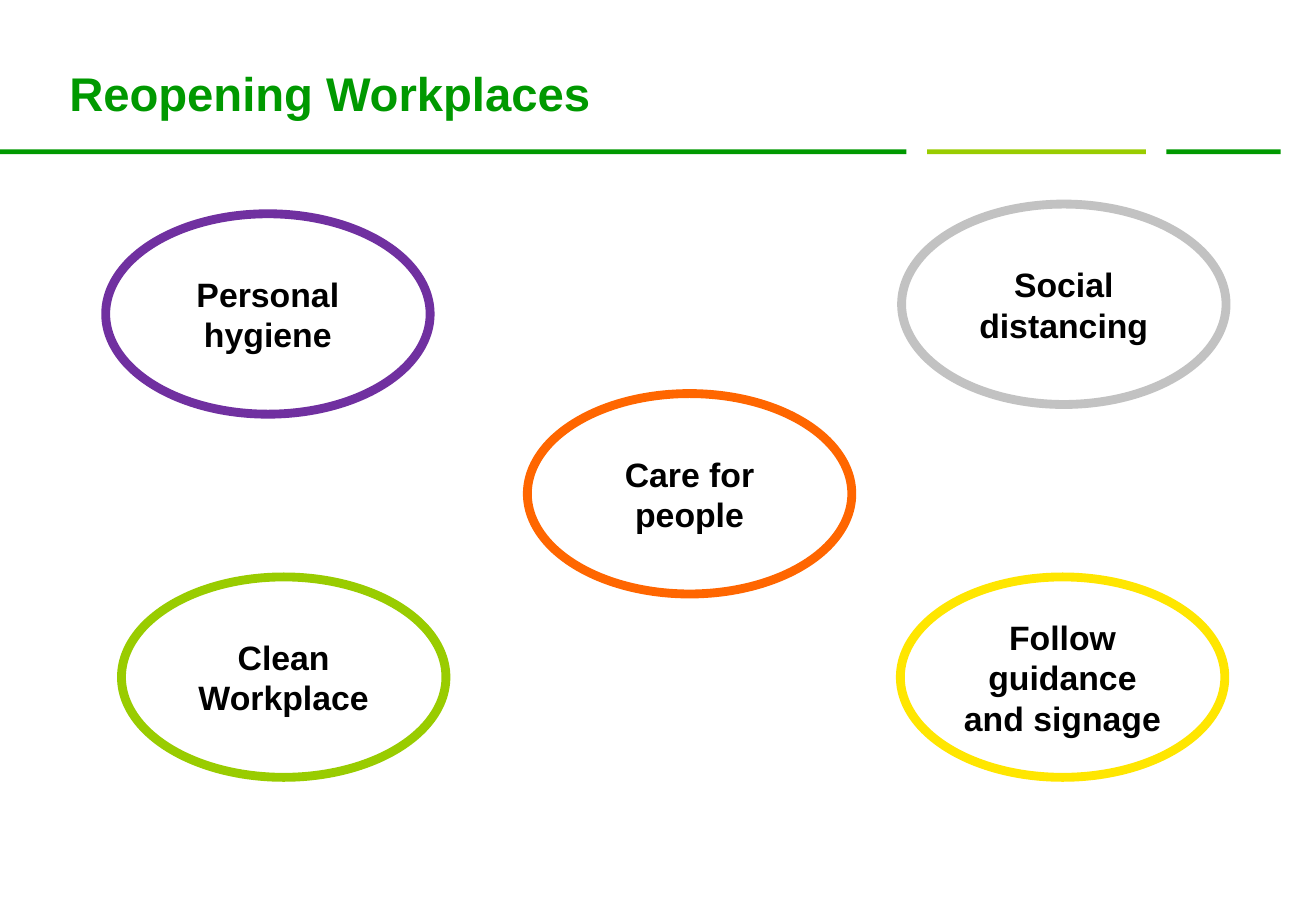
from pptx import Presentation
from pptx import util as u
from pptx.dml.color import RGBColor
from pptx.enum import shapes, text

COLORS = {
    "green": "009900",
    "lime": "99CC00",
    "grey": "C2C2C2",
    "yellow": "FFE600",
    "orange": "FF6600",
    "purple": "7030A0",
    "white": "FFFFFF",
    "black": "000000",
}


def rgb(name):
    return RGBColor.from_string(COLORS[name])


class SlideBuilder:
    font_name = "Arial"
    bubble_size = (2.67, 1.65)
    bar_top, bar_height = 1.23, 0.04

    def __init__(self, presentation):
        self.slide = presentation.slides.add_slide(presentation.slide_layouts[6])

    def set_label(self, shape, content, size, color, alignment, margins):
        frame = shape.text_frame
        sides = ("margin_left", "margin_top", "margin_right", "margin_bottom")
        settings = {
            "word_wrap": True,
            "vertical_anchor": text.MSO_ANCHOR.MIDDLE,
            **{side: u.Inches(margin) for side, margin in zip(sides, margins)},
        }
        for name, value in settings.items():
            setattr(frame, name, value)
        paragraph = frame.paragraphs[0]
        paragraph.alignment = alignment
        run = paragraph.add_run()
        run.text = content
        font = {"name": self.font_name, "size": u.Pt(size), "bold": True}
        for name, value in font.items():
            setattr(run.font, name, value)
        run.font.color.rgb = rgb(color)

    def add_filled(self, kind, box, fill):
        shape = self.slide.shapes.add_shape(kind, *map(u.Inches, box))
        shape.shadow.inherit = False
        shape.fill.solid()
        shape.fill.fore_color.rgb = rgb(fill)
        return shape

    def bar(self, left, width, color):
        box = (left, self.bar_top, width, self.bar_height)
        shape = self.add_filled(shapes.MSO_SHAPE.RECTANGLE, box, color)
        shape.line.fill.background()

    def title(self, content, box):
        shape = self.slide.shapes.add_textbox(*map(u.Inches, box))
        self.set_label(shape, content, 28, "green", text.PP_ALIGN.LEFT,
                       (0.59, 0.05, 0.1, 0.05))

    def bubble(self, content, left, top, color):
        box = (left, top, *self.bubble_size)
        shape = self.add_filled(shapes.MSO_SHAPE.OVAL, box, "white")
        shape.line.color.rgb = rgb(color)
        shape.line.width = u.Pt(5.25)
        self.set_label(shape, content, 20, "black", text.PP_ALIGN.CENTER,
                       (0.1, 0.05, 0.1, 0.05))


def main():
    presentation = Presentation()
    presentation.slide_width = u.Inches(10.83)
    presentation.slide_height = u.Inches(7.5)
    builder = SlideBuilder(presentation)

    for left, width, color in [(0, 7.46, "green"), (7.63, 1.8, "lime"),
                               (9.6, 0.94, "green")]:
        builder.bar(left, width, color)

    builder.title("Reopening Workplaces", (-0.02, 0.25, 9.28, 1.02))

    for content, left, top, color in [
        ("Social distancing", 7.42, 1.68, "grey"),
        ("Follow guidance and signage", 7.41, 4.75, "yellow"),
        ("Care for people", 4.34, 3.24, "orange"),
        ("Clean Workplace", 1, 4.75, "lime"),
        ("Personal hygiene", 0.87, 1.76, "purple"),
    ]:
        builder.bubble(content, left, top, color)

    presentation.save("out.pptx")


if __name__ == "__main__":
    main()
